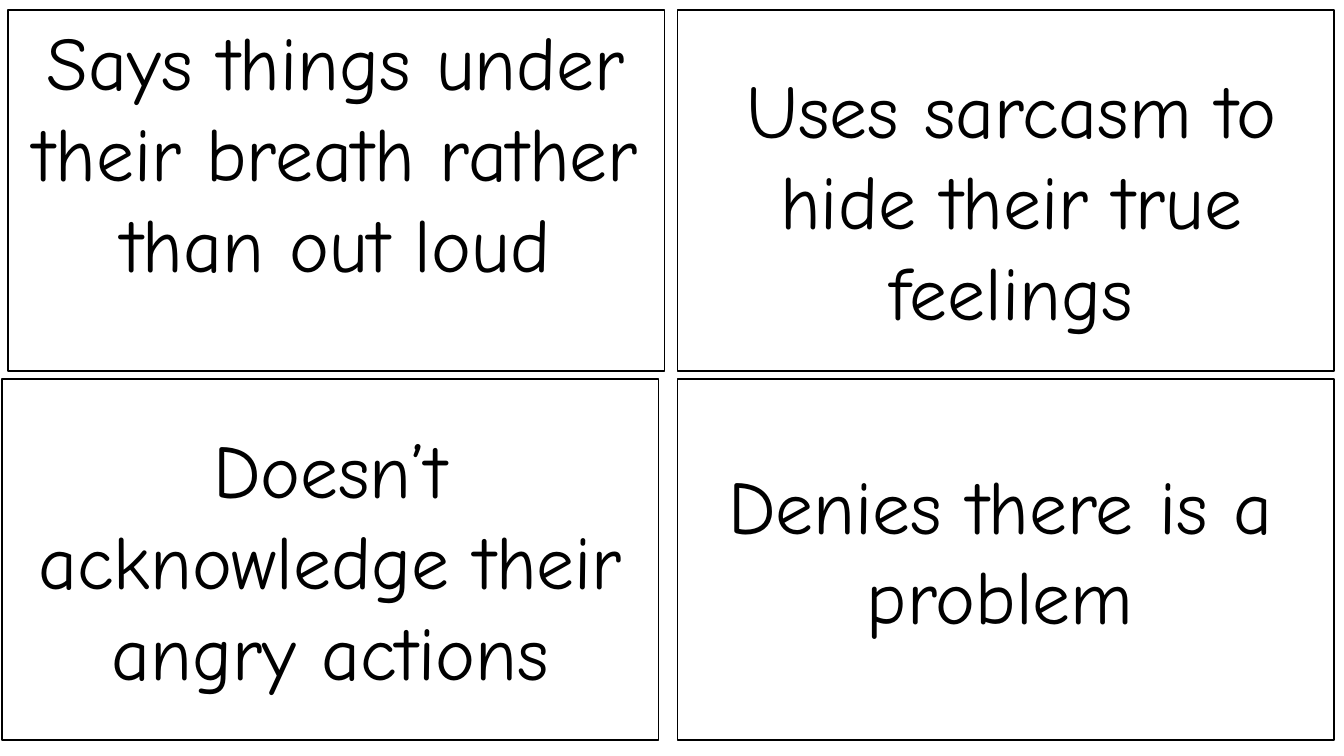
from pptx import Presentation
from pptx.dml.color import RGBColor
from pptx.enum.shapes import MSO_SHAPE
from pptx.enum.text import MSO_ANCHOR, PP_ALIGN
from pptx.util import Inches, Pt

RECTANGLE = MSO_SHAPE.RECTANGLE
TOP, MIDDLE = MSO_ANCHOR.TOP, MSO_ANCHOR.MIDDLE
CENTER = PP_ALIGN.CENTER

BLACK, WHITE = "000000", "FFFFFF"
FONT, TEXT_SIZE = "Comic Neue", 54
CARD_WIDTH, CARD_HEIGHT = 6.51, 3.58
LABEL_WIDTH = 6.4
LEFT_TOP, LEFT_BOTTOM, RIGHT = 0.08, 0.02, 6.72
UPPER, LOWER = 0.1, 3.76

CARDS = [
    (LEFT_TOP, UPPER, "Says things under their breath rather than out loud", (0.05, 0, 3.74)),
    (LEFT_BOTTOM, LOWER, "Doesn’t acknowledge their angry actions", None),
    (RIGHT, UPPER, "Uses sarcasm to hide their true feelings", (0.11, 0.48, 2.83)),
    (RIGHT, LOWER, "Denies there is a problem", (0, 0.74, 1.92)),
]


def color(value):
    """Return the colour for a hex string."""
    return RGBColor.from_string(value)


def write_text(shape, text, anchor):
    """Put centred, wrapped black text into a shape."""
    frame = shape.text_frame
    frame.text = text
    frame.word_wrap = True
    frame.vertical_anchor = anchor
    para = frame.paragraphs[0]
    para.alignment = CENTER
    font = para.runs[0].font
    font.name = FONT
    font.size = Pt(TEXT_SIZE)
    font.color.rgb = color(BLACK)


def add_card(page, left, top):
    """Draw one outlined white card."""
    card = page.shapes.add_shape(
        RECTANGLE, Inches(left), Inches(top), Inches(CARD_WIDTH), Inches(CARD_HEIGHT)
    )
    card.shadow.inherit = False
    card.fill.solid()
    card.fill.fore_color.rgb = color(WHITE)
    card.line.color.rgb = color(BLACK)
    card.line.width = Pt(1)
    return card


def add_behavior(page, left, top, text, label):
    """Draw a card with its text, inside it or in a label offset from its corner."""
    card = add_card(page, left, top)
    if label is None:
        write_text(card, text, MIDDLE)
        return
    shift_x, shift_y, height = label
    box = page.shapes.add_textbox(
        Inches(left + shift_x), Inches(top + shift_y), Inches(LABEL_WIDTH), Inches(height)
    )
    write_text(box, text, TOP)


def main():
    """Build the slide of four behavior cards."""
    deck = Presentation()
    deck.slide_width, deck.slide_height = Inches(13.33), Inches(7.5)
    page = deck.slides.add_slide(deck.slide_layouts[6])
    for left, top, text, label in CARDS:
        add_behavior(page, left, top, text, label)
    deck.save("out.pptx")


if __name__ == "__main__":
    main()
